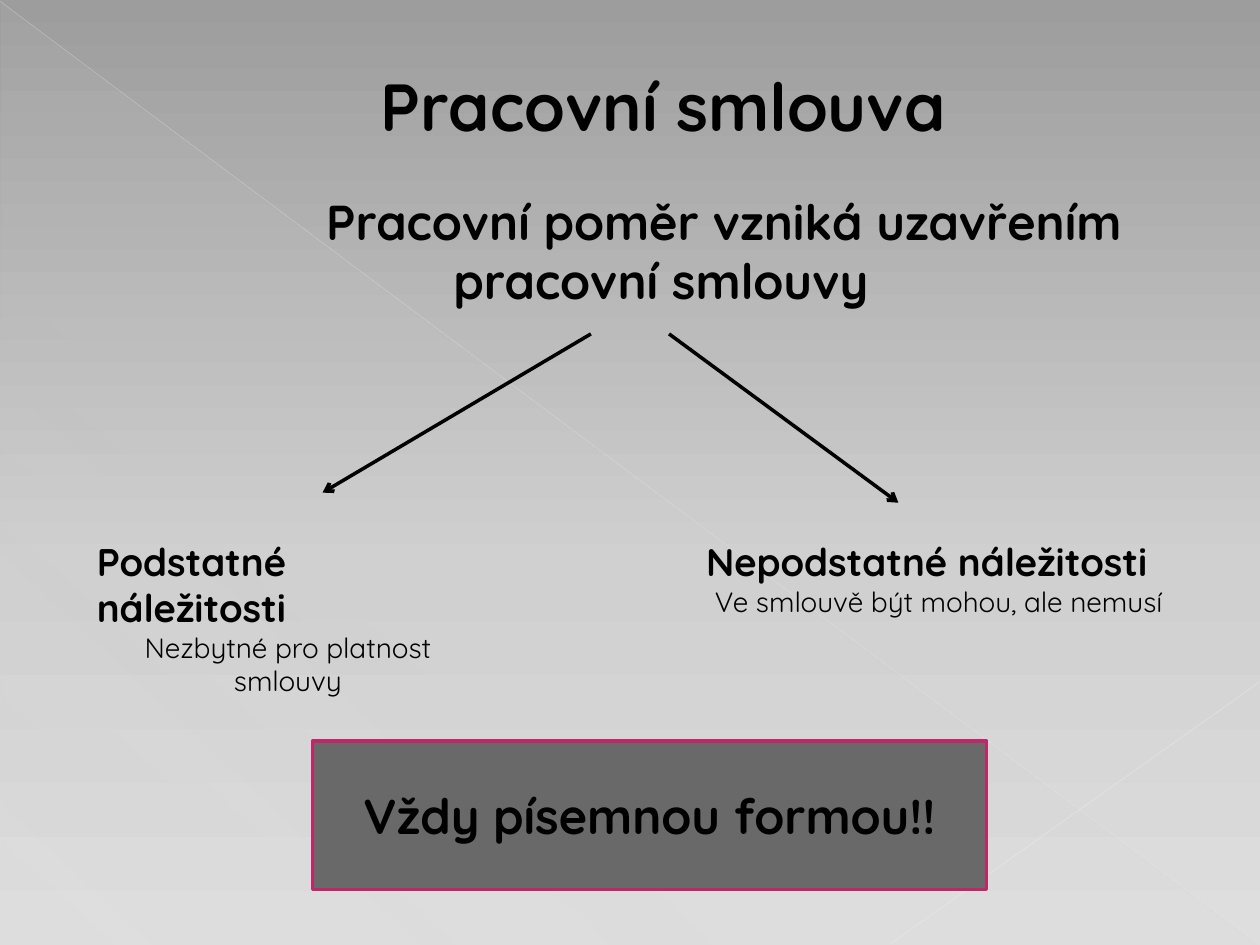
from lxml import etree
from pptx import Presentation
from pptx import util as u
from pptx.dml.color import RGBColor
from pptx.enum import shapes, text
from pptx.oxml.ns import qn

THEME = {
    "font": "Quicksand",
    "ink": "000000",
    "box": "696969",
    "border": "BD2968",
    "title": 38,
    "statement": 28,
    "heading": 22,
    "detail": 16,
    "arrow": 2,
    "background": [(0, "9D9D9D", 100), (60, "D0D0D0", 100), (100, "DEDEDE", 100)],
    "sheen": [(0, "D2D2D2", 10), (70, "D2D2D2", 8), (100, "D2D2D2", 1)],
}
CENTER = text.PP_ALIGN.CENTER
LEFT = text.PP_ALIGN.LEFT
MIDDLE = text.MSO_ANCHOR.MIDDLE

TITLE = "Pracovní smlouva"
STATEMENT = "Pracovní poměr vzniká uzavřením pracovní smlouvy"
CONCLUSION = "Vždy písemnou formou!!"
REQUIREMENTS = [
    {"place": (0.67, 4.22, 3.23, 1.01), "heading": "Podstatné náležitosti",
     "detail": "Nezbytné pro platnost smlouvy", "align": LEFT, "margin": 0},
    {"place": (5.31, 4.22, 4.09, 1.01), "heading": "Nepodstatné náležitosti",
     "detail": "Ve smlouvě být mohou, ale nemusí", "align": CENTER, "margin": 0.19},
]
ARROWS = [((4.69, 2.65), (2.56, 3.91)), ((5.31, 2.65), (7.13, 3.99))]
RAYS = [((0, 0.01), (9.99, 7.49), "EBEBEB", 0.39, 35),
        ((10, 5.41), (7.07, 7.49), "EDEDED", 0.47, 45)]


def inches(values):
    return [u.Inches(value) for value in values]


def set_alpha(color, percent):
    etree.SubElement(color, qn("a:alpha"), val=str(percent * 1000))


def set_gradient(fill, owner, stops, angle):
    fill.gradient()
    gradient = next(owner.iter(qn("a:gradFill")))
    gradient.clear()
    stop_list = etree.SubElement(gradient, qn("a:gsLst"))
    for position, color, opacity in stops:
        stop = etree.SubElement(stop_list, qn("a:gs"), pos=str(position * 1000))
        tint = etree.SubElement(stop, qn("a:srgbClr"), val=color)
        if opacity < 100:
            set_alpha(tint, opacity)
    etree.SubElement(gradient, qn("a:lin"), ang=str(angle * 60000), scaled="0")


def add_line(slide, start, end, color, width, opacity=100, arrow=False):
    line = slide.shapes.add_connector(
        shapes.MSO_CONNECTOR.STRAIGHT, *inches(start + end))
    line.line.color.rgb = RGBColor.from_string(color)
    line.line.width = u.Pt(width)
    outline = line.line._get_or_add_ln()
    if opacity < 100:
        set_alpha(next(outline.iter(qn("a:srgbClr"))), opacity)
    if arrow:
        etree.SubElement(outline, qn("a:tailEnd"), type="arrow")
    etree.SubElement(line._element.spPr, qn("a:effectLst"))


def write(paragraph, content, size, bold=True, align=CENTER, margin=0, indent=0):
    paragraph.alignment = align
    properties = paragraph._p.get_or_add_pPr()
    properties.set("marL", str(u.Inches(margin)))
    properties.set("indent", str(u.Inches(indent)))
    run = paragraph.add_run()
    run.text = content
    run.font.name = THEME["font"]
    run.font.size = u.Pt(THEME[size])
    run.font.bold = bold
    run.font.color.rgb = RGBColor.from_string(THEME["ink"])


def add_frame(slide, place, anchor=text.MSO_ANCHOR.TOP):
    frame = slide.shapes.add_textbox(*inches(place)).text_frame
    frame.word_wrap = True
    frame.vertical_anchor = anchor
    return frame


def main():
    deck = Presentation()
    deck.slide_width, deck.slide_height = inches((10, 7.5))
    slide = deck.slides.add_slide(deck.slide_layouts[6])
    set_gradient(slide.background.fill, slide._element, THEME["background"], 90)

    sheen = slide.shapes.add_shape(
        shapes.MSO_SHAPE.RIGHT_TRIANGLE, *inches((0.01, 0.02, 9.98, 7.48)))
    sheen.shadow.inherit = False
    sheen.line.fill.background()
    set_gradient(sheen.fill, sheen._element, THEME["sheen"], 133)
    for ray in RAYS:
        add_line(slide, *ray)

    title = add_frame(slide, (0.5, 0.29, 9, 1.09), MIDDLE)
    write(title.paragraphs[0], TITLE, "title", margin=0.53)
    statement = add_frame(slide, (0.5, 1.47, 9, 1.1))
    write(statement.paragraphs[0], STATEMENT, "statement", margin=0.49, indent=1)

    for start, end in ARROWS:
        add_line(slide, start, end, THEME["ink"], THEME["arrow"], arrow=True)

    for requirement in REQUIREMENTS:
        frame = add_frame(slide, requirement["place"])
        write(frame.paragraphs[0], requirement["heading"], "heading",
              align=requirement["align"])
        write(frame.add_paragraph(), requirement["detail"], "detail",
              bold=False, margin=requirement["margin"])

    conclusion = slide.shapes.add_shape(
        shapes.MSO_SHAPE.RECTANGLE, *inches((2.48, 5.88, 5.35, 1.18)))
    conclusion.shadow.inherit = False
    conclusion.fill.solid()
    conclusion.fill.fore_color.rgb = RGBColor.from_string(THEME["box"])
    conclusion.line.color.rgb = RGBColor.from_string(THEME["border"])
    conclusion.line.width = u.Pt(2)
    conclusion.text_frame.vertical_anchor = MIDDLE
    write(conclusion.text_frame.paragraphs[0], CONCLUSION, "statement")

    deck.save("out.pptx")


if __name__ == "__main__":
    main()
